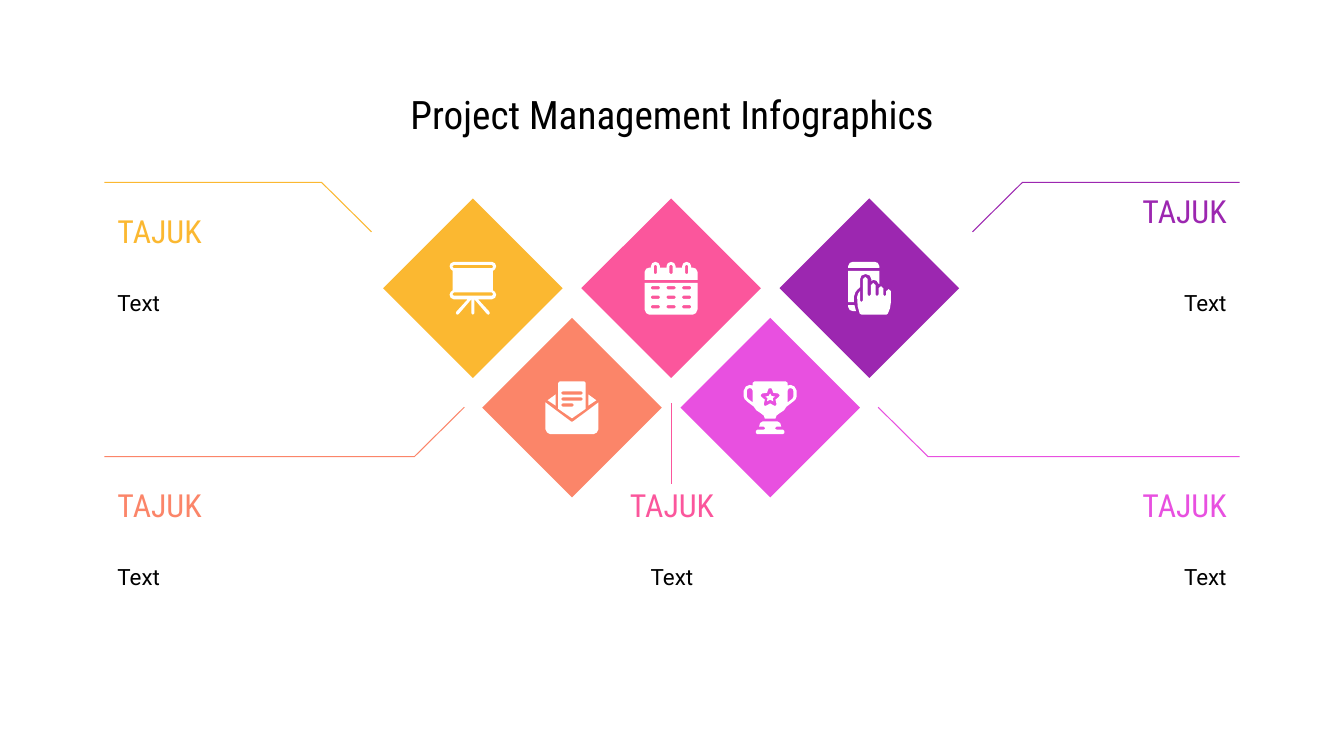
"""Draws a slide of five diamonds with icons, leader lines and captions."""
from dataclasses import dataclass
from lxml import etree
from pptx import Presentation
from pptx.dml.color import RGBColor
from pptx.enum.shapes import MSO_CONNECTOR, MSO_SHAPE
from pptx.enum.text import MSO_ANCHOR, PP_ALIGN
from pptx.oxml.ns import qn
from pptx.util import Inches, Pt

RECT = MSO_SHAPE.RECTANGLE
STRAIGHT = MSO_CONNECTOR.STRAIGHT
MIDDLE = MSO_ANCHOR.MIDDLE
LEFT, CENTER, RIGHT = PP_ALIGN.LEFT, PP_ALIGN.CENTER, PP_ALIGN.RIGHT


@dataclass(frozen=True)
class Theme:
    gold: str = "FBB831"
    coral: str = "FB8569"
    pink: str = "FB569C"
    orchid: str = "E850E0"
    purple: str = "9C27B0"
    ink: str = "000000"
    white: str = "FFFFFF"
    head: str = "Roboto Condensed"
    body: str = "Roboto"
    title: float = 28
    label: float = 22.7
    text: float = 16
    line: float = 0.75
    inset: float = 1.3
    cell: float = 0.1
    icon: float = 5.25


class Canvas:
    """Holds the theme and the slide; lengths are cells of the grid."""

    def __init__(self, theme, slide):
        self.theme, self.slide = theme, slide

    def size(self, cells):
        return Inches(cells * self.theme.cell)

    def paint(self, shape, color):
        shape.shadow.inherit = False
        shape.fill.solid()
        shape.fill.fore_color.rgb = RGBColor.from_string(color)
        shape.line.fill.background()

    def stroke(self, shape, color):
        shape.line.color.rgb = RGBColor.from_string(color)
        shape.line.width = Pt(self.theme.line)

    def trace(self, loops, close):
        pen = None
        for loop in loops:
            first, *rest = [tuple(map(self.size, point)) for point in loop]
            if pen is None:
                pen = self.slide.shapes.build_freeform(*first)
            else:
                pen.move_to(*first)
            pen.add_line_segments(rest, close=close)
        return pen.convert_to_shape()

    def leader(self, points, color):
        shape = self.trace([points], False)
        shape.shadow.inherit = False
        shape.fill.background()
        self.stroke(shape, color)

    def line(self, start, end, color):
        line = self.slide.shapes.add_connector(STRAIGHT, *map(self.size, start + end))
        self.stroke(line, color)
        etree.SubElement(line._element.spPr, qn("a:effectLst"))

    def text(self, words, box, font, points, color, align):
        frame = self.slide.shapes.add_textbox(*map(self.size, box)).text_frame
        frame.word_wrap = True
        frame.vertical_anchor = MIDDLE
        inset = self.size(self.theme.inset)
        frame.margin_left = frame.margin_right = inset
        frame.margin_top = frame.margin_bottom = inset
        para = frame.paragraphs[0]
        para.alignment = align
        run = para.add_run()
        run.text = words
        run.font.name, run.font.size = font, Pt(points)
        run.font.color.rgb = RGBColor.from_string(color)

    def label(self, left, top, wide, color, align):
        look = self.theme
        self.text("TAJUK", (left, top, wide, 4.2), look.head, look.label, color, align)

    def detail(self, left, top, align):
        look = self.theme
        self.text("Text", (left, top, 25.4, 11), look.body, look.text, look.ink, align)

    def diamond(self, x, y, color):
        side = 12.6
        box = (x - side / 2, y - side / 2, side, side)
        shape = self.slide.shapes.add_shape(RECT, *map(self.size, box))
        shape.rotation = 45
        self.paint(shape, color)

    def icon(self, x, y, parts):
        side = self.theme.icon
        left, top = x - side / 2, y - side / 2
        for part in parts:
            loops = [[(left + a * side / 100, top + b * side / 100) for a, b in loop]
                     for loop in part]
            self.paint(self.trace(loops, True), self.theme.white)


def pill(x, y, wide, high):
    cut = 2
    right, base = x + wide, y + high
    return [(x + cut, y), (right - cut, y), (right, y + cut), (right, base - cut),
            (right - cut, base), (x + cut, base), (x, base - cut), (x, y + cut)]


def flip(points):
    return [(100 - x, y) for x, y in points]


def whole(*half):
    return [*half, *flip(reversed(half))]


STEPS = [29.5 * n for n in range(3)]
BOARD = [[
    whole((50, 0), (14, 0), (8, 3), (6, 8.5), (8, 14), (12, 17), (12, 54), (8, 57),
          (6, 62), (8, 68), (14, 71), (40, 71), (19, 94), (18, 97), (20, 100),
          (23, 99), (47, 71), (47, 97), (50, 100)),
    pill(12, 6, 76, 6), pill(12, 58, 76, 6),
]]
RINGS = [(x + a, b) for x in STEPS for a, b in (
    (12, 11), (12, 8), (14.5, 2.5), (20.5, 0), (26.5, 2.5), (29, 8), (29, 11))]
DATES = [
    [whole((0, 40), (0, 90), (3, 97), (9, 100)),
     *[pill(12 + x, 46 + 18 * row, 17, 6) for row in range(3) for x in STEPS]],
    [[(0, 34), (0, 19), (3, 13), (9, 11), *RINGS, (91, 11), (97, 13), (100, 19), (100, 34)],
     *[pill(17.5 + x, 6, 6, 17) for x in STEPS]],
]
HAND = [(x + a, b) for x, y in ((38, 28.5), (53, 40), (67.5, 46), (82, 51.5))
        for a, b in ((0, 62), (0, y + 4), (4.5, y), (9, y + 4), (9, 62), (11.5, 65))]
PHONE = [
    [[(10, 82), (22, 82), (25, 93), (19, 93), (13, 91), (10, 85)]],
    [[(10, 17), (10, 76), (21, 76), (21, 66), (24, 57), (28, 52), (32.5, 48),
      (32.5, 33), (35, 26), (43, 23), (51, 26), (54, 33), (54, 36), (58, 34),
      (64, 36), (67, 41), (69, 42), (69, 17)]],
    [[(10, 11.5), (10, 8), (13, 2), (19, 0), (60, 0), (66, 2), (69, 8), (69, 11.5)]],
    [[*HAND[:-1], (91, 75), (89, 88), (85, 98), (82, 100), (36, 100), (32, 98),
      (28, 84), (27, 66), (29, 60), (32.5, 55), (32.5, 73), (35, 76), (38, 73)]],
]
FLAP = [(19, 25), (4, 36), (19, 46)]
MAIL = [
    [whole((50, 76.5), (48, 76), (0, 40), (0, 91), (3, 97), (9, 100))],
    [flip(FLAP)],
    [FLAP],
    [whole((50, 0), (27, 0), (24, 3), (24, 52), (50, 70)),
     *[pill(30, y, wide, 6) for y, wide in ((19, 40), (30.5, 40), (42, 23))]],
]
GRIP = [(17, 18), (15, 14), (11, 13), (7, 15), (6, 19), (6, 29), (8, 33), (17, 40)]
CUP = [
    [whole((50, 0), (21, 0), (17, 3), (17, 8), (11, 7), (4, 10), (0, 18), (0, 29),
           (2, 34), (6, 38), (19, 48), (24, 55), (33, 61), (38, 65), (40, 70.5)),
     GRIP, flip(GRIP),
     whole((50, 13), (53, 14), (56, 22), (65, 23), (68, 26), (67, 29), (60, 35),
           (62, 43), (61, 46), (58, 46.5), (50, 42))],
    [whole((50, 76), (36, 76), (31, 79), (29, 86), (38, 86), (41, 89), (38, 91.5),
           (26, 91.5), (23, 94), (23, 98), (26, 100))],
    [whole((50, 23), (53, 28), (59, 29), (55, 32), (56, 38), (50, 35))],
]


def main():
    deck = Presentation()
    deck.slide_width, deck.slide_height = Inches(13.33), Inches(7.5)
    look = Theme()
    page = Canvas(look, deck.slides.add_slide(deck.slide_layouts[6]))
    page.text("Project Management Infographics", (10.35, 7.8, 112.6, 7),
              look.head, look.title, look.ink, CENTER)

    items = [(look.gold, BOARD), (look.coral, MAIL), (look.pink, DATES),
             (look.orchid, CUP), (look.purple, PHONE)]
    for spot, (color, parts) in enumerate(items):
        x, y = 46.9 + 9.83 * spot, 28.6 + 11.85 * (spot % 2)
        page.diamond(x, y, color)
        page.icon(x, y, parts)

    near, far = 10.35, 122.95
    sides = [
        (look.gold, LEFT, near, 36.85, 31.9, 23, 18.1, 20.8, 24.5),
        (look.purple, RIGHT, far, 96.45, 101.4, 23, 18.1, 18.8, 24.5),
        (look.coral, LEFT, near, 46.05, 41.1, 40.4, 45.3, 48, 51.7),
        (look.orchid, RIGHT, far, 87.1, 92.05, 40.4, 45.3, 48, 51.7),
    ]
    for color, align, edge, tip, bend, start, level, label, detail in sides:
        page.leader([(tip, start), (bend, level), (edge, level)], color)
        page.detail(near if align == LEFT else far - 25.4, detail, align)
        page.label(near if align == LEFT else far - 21.5, label, 21.5, color, align)

    page.line((66.6, 40), (66.6, 48), look.pink)
    page.detail(53.95, 51.7, CENTER)
    page.label(54.15, 48, 25, look.pink, CENTER)
    deck.save("out.pptx")


if __name__ == "__main__":
    main()
